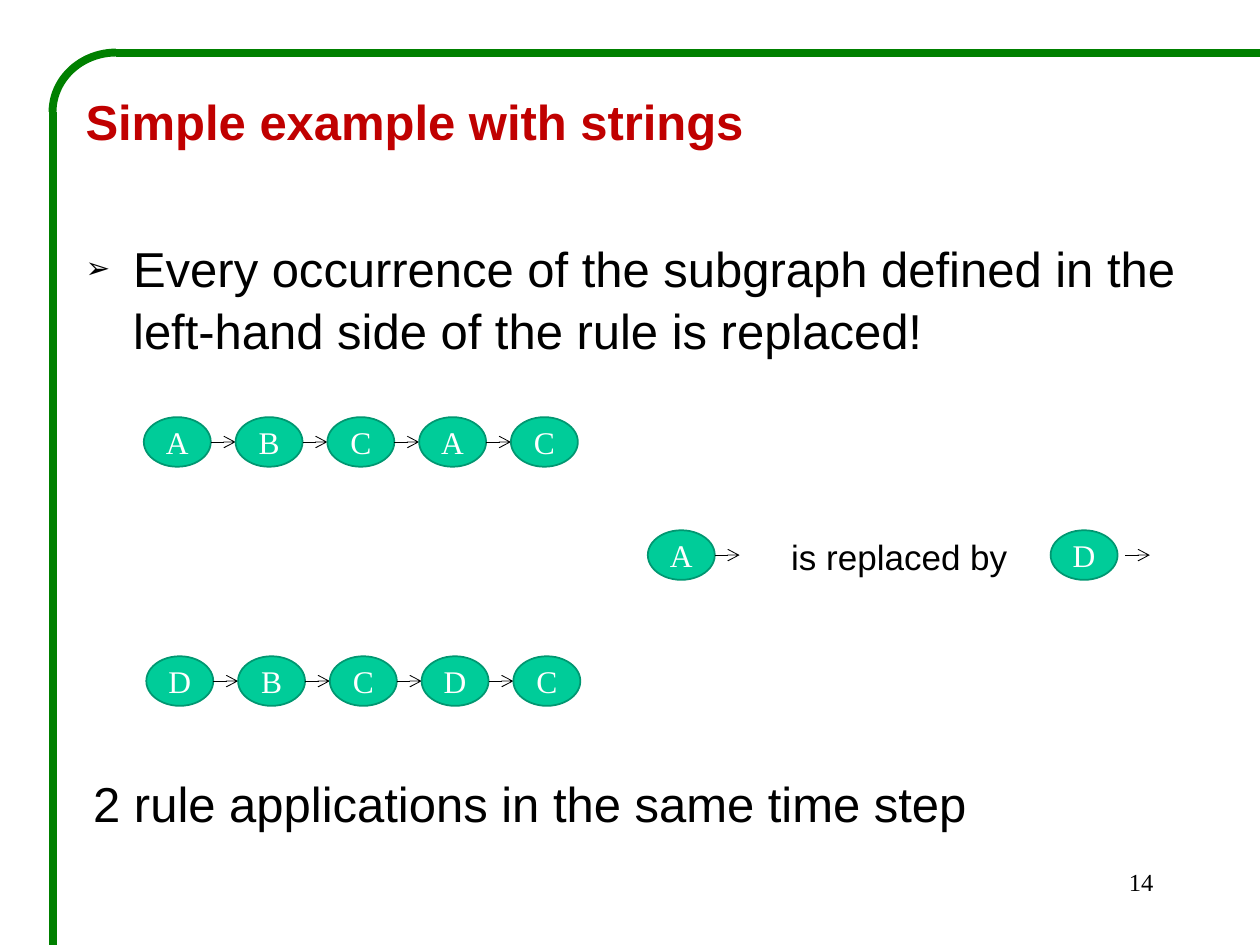
from dataclasses import dataclass

import lxml.etree
import pptx
import pptx.dml.color
import pptx.enum.shapes
import pptx.enum.text
import pptx.oxml.ns
import pptx.shapes.autoshape
import pptx.shapes.base
import pptx.shapes.connector
import pptx.slide
import pptx.text.text
import pptx.util
from pptx.util import Cm


@dataclass(frozen=True)
class Theme:
    heading: str = "C00000"
    text: str = "000000"
    node_fill: str = "00CC99"
    node_line: str = "009771"
    node_text: str = "FFFFFF"
    frame: str = "008000"
    sans: str = "Arial"
    serif: str = "Times New Roman"
    large: int = 28
    rule: int = 20
    node: int = 18
    number: int = 14


@dataclass(frozen=True)
class Chain:
    """A row of nodes; positions are in centimetres."""
    letters: str
    left: float
    top: float
    open_end: bool = False
    arrow_offset: float = 0


@dataclass(frozen=True)
class Box:
    left: float
    top: float
    width: float
    height: float

    def lengths(self) -> tuple:
        return Cm(self.left), Cm(self.top), Cm(self.width), Cm(self.height)


THEME = Theme()
NODE_WIDTH, NODE_HEIGHT, ARROW_LENGTH = 1.35, 1.0, 0.5
PITCH = NODE_WIDTH + ARROW_LENGTH
FRAME_EDGE, FRAME_RADIUS_X, FRAME_RADIUS_Y = 1.06, 1.28, 1.2
SLIDE_WIDTH, SLIDE_HEIGHT = 25.4, 19.05
CHAINS = (
    Chain("ABCAC", 2.9, 8.41),
    Chain("A", 13.06, 10.69, open_end=True),
    Chain("D", 21.18, 10.69, open_end=True, arrow_offset=0.15),
    Chain("DBCDC", 2.95, 13.23),
)


def rgb(value: str) -> pptx.dml.color.RGBColor:
    return pptx.dml.color.RGBColor.from_string(value)


def add_run(paragraph, text: str, size: int, color: str = THEME.text,
            font: str = THEME.sans, bold: bool = False) -> None:
    run = paragraph.add_run()
    run.text = text
    run.font.size = pptx.util.Pt(size)
    run.font.name = font
    run.font.bold = bold
    run.font.color.rgb = rgb(color)


def add_element(parent, tag: str, **attributes: str) -> None:
    lxml.etree.SubElement(parent, pptx.oxml.ns.qn(tag), **attributes)


def fill_placeholder(shape: pptx.shapes.base.BaseShape,
                     box: Box) -> pptx.text.text._Paragraph:
    """Move a placeholder and return its left-aligned first paragraph."""
    shape.left, shape.top, shape.width, shape.height = box.lengths()
    frame = shape.text_frame
    frame.word_wrap = True
    frame.auto_size = pptx.enum.text.MSO_AUTO_SIZE.NONE
    frame.vertical_anchor = pptx.enum.text.MSO_ANCHOR.TOP
    paragraph = frame.paragraphs[0]
    paragraph.alignment = pptx.enum.text.PP_ALIGN.LEFT
    paragraph.space_before = pptx.util.Pt(0)
    return paragraph


def add_bullet(paragraph: pptx.text.text._Paragraph) -> None:
    properties = paragraph._p.get_or_add_pPr()
    indent = Cm(0.96)
    properties.set("marL", str(indent))
    properties.set("indent", str(-indent))
    add_element(properties, "a:buSzPct", val="60000")
    add_element(properties, "a:buFont", typeface=THEME.sans)
    add_element(properties, "a:buChar", char="➢")


def add_label(slide: pptx.slide.Slide, box: Box, wrap: bool = True) -> pptx.text.text._Paragraph:
    frame = slide.shapes.add_textbox(*box.lengths()).text_frame
    frame.word_wrap = wrap
    return frame.paragraphs[0]


def add_line(slide: pptx.slide.Slide, start: tuple, end: tuple, color: str,
             width: float) -> pptx.shapes.connector.Connector:
    connector = slide.shapes.add_connector(
        pptx.enum.shapes.MSO_CONNECTOR.STRAIGHT,
        *(Cm(value) for value in start + end))
    connector.line.color.rgb = rgb(color)
    connector.line.width = pptx.util.Pt(width)
    add_element(connector._element.spPr, "a:effectLst")
    return connector


def add_arrow(slide: pptx.slide.Slide, left: float, middle: float) -> None:
    connector = add_line(slide, (left, middle), (left + ARROW_LENGTH, middle),
                         THEME.text, 0.5)
    line = connector._element.spPr.find(pptx.oxml.ns.qn("a:ln"))
    add_element(line, "a:tailEnd", type="arrow")


def add_node(slide: pptx.slide.Slide, letter: str, left: float, top: float) -> None:
    box = Box(left, top, NODE_WIDTH, NODE_HEIGHT)
    shape = slide.shapes.add_shape(pptx.enum.shapes.MSO_SHAPE.OVAL, *box.lengths())
    shape.shadow.inherit = False
    shape.fill.solid()
    shape.fill.fore_color.rgb = rgb(THEME.node_fill)
    shape.line.color.rgb = rgb(THEME.node_line)
    shape.line.width = pptx.util.Pt(1)
    frame = shape.text_frame
    frame.margin_left = frame.margin_right = 0
    frame.vertical_anchor = pptx.enum.text.MSO_ANCHOR.MIDDLE
    paragraph = frame.paragraphs[0]
    paragraph.alignment = pptx.enum.text.PP_ALIGN.CENTER
    add_run(paragraph, letter, THEME.node, THEME.node_text, THEME.serif)


def add_chain(slide: pptx.slide.Slide, chain: Chain) -> None:
    for index, letter in enumerate(chain.letters):
        left = chain.left + index * PITCH
        add_node(slide, letter, left, chain.top)
        if chain.open_end or index < len(chain.letters) - 1:
            add_arrow(slide, left + NODE_WIDTH + chain.arrow_offset,
                      chain.top + NODE_HEIGHT / 2)


def add_frame(slide: pptx.slide.Slide) -> None:
    """Green border: top edge, left edge and the rounded corner."""
    corner_x, corner_y = FRAME_EDGE + FRAME_RADIUS_X, FRAME_EDGE + FRAME_RADIUS_Y
    add_line(slide, (corner_x, FRAME_EDGE), (SLIDE_WIDTH, FRAME_EDGE), THEME.frame, 4.5)
    add_line(slide, (FRAME_EDGE, corner_y), (FRAME_EDGE, SLIDE_HEIGHT), THEME.frame, 4.5)
    box = Box(FRAME_EDGE, FRAME_EDGE, 2 * FRAME_RADIUS_X, 2 * FRAME_RADIUS_Y)
    arc = slide.shapes.add_shape(pptx.enum.shapes.MSO_SHAPE.ARC, *box.lengths())
    arc.adjustments[0], arc.adjustments[1] = 108, 162  # 180 to 270 degrees
    arc.shadow.inherit = False
    arc.fill.background()
    arc.line.color.rgb = rgb(THEME.frame)
    arc.line.width = pptx.util.Pt(4.5)


def main() -> None:
    presentation = pptx.Presentation()
    presentation.slide_width, presentation.slide_height = Cm(SLIDE_WIDTH), Cm(SLIDE_HEIGHT)
    slide = presentation.slides.add_slide(presentation.slide_layouts[1])

    # Title and bullet
    title = fill_placeholder(slide.shapes.title, Box(1.47, 1.72, 22.86, 1.5))
    add_run(title, "Simple example with strings", THEME.large, THEME.heading, bold=True)
    body = fill_placeholder(slide.placeholders[1], Box(1.47, 4.62, 22.86, 2.7))
    body.line_spacing = 1.05
    add_bullet(body)
    add_run(body, "Every occurrence of the subgraph defined in the "
            "left-hand side of the rule is replaced!", THEME.large)

    # Strings before and after, with the rule between them
    for chain in CHAINS:
        add_chain(slide, chain)
    rule = add_label(slide, Box(15.7, 10.67, 4.9, 1.11), wrap=False)
    add_run(rule, "is replaced by", THEME.rule)

    # Conclusion, border and slide number
    conclusion = add_label(slide, Box(1.63, 15.46, 18.47, 1.8))
    add_run(conclusion, "2 rule applications in the same time step", THEME.large)
    add_frame(slide)
    number = add_label(slide, Box(18.2, 17.35, 5.3, 1.27))
    number.alignment = pptx.enum.text.PP_ALIGN.RIGHT
    add_run(number, "14", THEME.number, font=THEME.serif)

    presentation.save("out.pptx")


if __name__ == "__main__":
    main()
